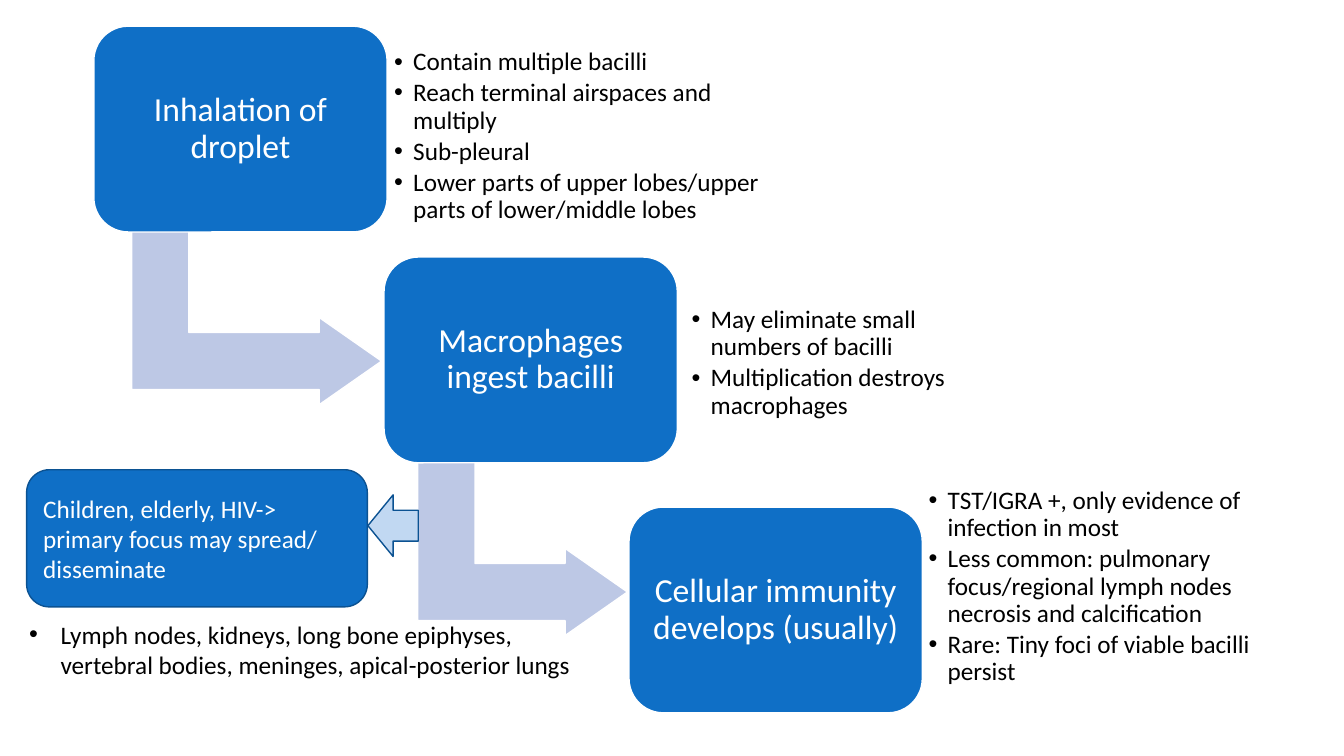
from lxml import etree
from pptx import Presentation
from pptx.dml.color import RGBColor
from pptx.enum.shapes import MSO_SHAPE
from pptx.enum.text import MSO_ANCHOR, PP_ALIGN
from pptx.oxml.ns import qn
from pptx.util import Pt

ROUNDED = MSO_SHAPE.ROUNDED_RECTANGLE
BENT_ARROW = MSO_SHAPE.BENT_UP_ARROW
LEFT_ARROW = MSO_SHAPE.LEFT_ARROW
MIDDLE, TOP = MSO_ANCHOR.MIDDLE, MSO_ANCHOR.TOP
LEFT, CENTER = PP_ALIGN.LEFT, PP_ALIGN.CENTER

BLUE = RGBColor(0x0F, 0x6F, 0xC6)
DARK_BLUE = RGBColor(0x0B, 0x52, 0x92)
PALE_BLUE = RGBColor(0xC1, 0xD8, 0xF2)
LAVENDER = RGBColor(0xBD, 0xC8, 0xE5)
WHITE = RGBColor(0xFF, 0xFF, 0xFF)
BLACK = RGBColor(0, 0, 0)

STEP_SIZE = (209.5, 147)


class FlowSlide:
    """Style and drawing methods for the current slide; lengths in points."""

    font_name = "Calibri"

    def __init__(self, slide):
        self.slide = slide

    def shape(self, kind, box, fill, line, adjustments=(), rotation=0):
        shape = self.slide.shapes.add_shape(kind, *map(Pt, box))
        shape.shadow.inherit = False
        shape.rotation = rotation
        shape.fill.solid()
        shape.fill.fore_color.rgb = fill
        shape.line.color.rgb = line
        shape.line.width = Pt(1)
        for index, value in enumerate(adjustments):
            shape.adjustments[index] = value
        return shape

    def set_text(self, shape, texts, size, color, anchor=MIDDLE, insets=(7.2, 3.6),
                 indent=0, **paragraph_format):
        frame = shape.text_frame
        frame.word_wrap = True
        frame.vertical_anchor = anchor
        frame.margin_left = frame.margin_right = Pt(insets[0])
        frame.margin_top = frame.margin_bottom = Pt(insets[1])
        for index, text in enumerate(texts):
            paragraph = frame.add_paragraph() if index else frame.paragraphs[0]
            for name, value in paragraph_format.items():
                setattr(paragraph, name, value)
            run = paragraph.add_run()
            run.text = text
            for name, value in {"name": self.font_name, "size": Pt(size)}.items():
                setattr(run.font, name, value)
            run.font.color.rgb = color
            if indent:
                self.bullet(paragraph, indent)

    def bullet(self, paragraph, indent):
        properties = paragraph._p.get_or_add_pPr()
        properties.set("marL", str(Pt(indent)))
        properties.set("indent", str(-Pt(indent)))
        etree.SubElement(properties, qn("a:buFont")).set("typeface", "Arial")
        etree.SubElement(properties, qn("a:buChar")).set("char", "•")

    def step(self, left, top, text):
        step = self.shape(ROUNDED, (left, top, *STEP_SIZE), BLUE, WHITE, (0.167,))
        self.set_text(step, [text], 24, WHITE, insets=(7.2, 7.2),
                      alignment=CENTER, line_spacing=0.9)

    def bent_arrow(self, box):
        self.shape(BENT_ARROW, box, LAVENDER, WHITE, (0.328, 0.25, 0.358), 90)

    def bullets(self, box, texts, **text_format):
        points = self.slide.shapes.add_textbox(*map(Pt, box))
        self.set_text(points, texts, 18, BLACK, alignment=LEFT, **text_format)


STEPS = [
    {"at": (67, 18.7), "text": "Inhalation of droplet",
     "arrow": (121, 137.5, 124.6, 178.6),
     "details_box": (276.5, 29.5, 291.6, 136),
     "details": ["Contain multiple bacilli",
                 "Reach terminal airspaces and multiply",
                 "Sub-pleural",
                 "Lower parts of upper lobes/upper parts of lower/middle lobes"]},
    {"at": (274.3, 183.6), "text": "Macrophages ingest bacilli",
     "arrow": (311, 316.8, 124.6, 149.8),
     "details_box": (489, 200, 235.4, 119),
     "details": ["May eliminate small numbers of bacilli",
                 "Multiplication destroys macrophages"]},
    {"at": (449.3, 362.2), "text": "Cellular immunity develops (usually)",
     "arrow": None,
     "details_box": (658.3, 335, 257.8, 168.5),
     "details": ["TST/IGRA +, only evidence of infection in most",
                 "Less common: pulmonary focus/regional lymph nodes "
                 "necrosis and calcification",
                 "Rare: Tiny foci of viable bacilli persist"]},
]


def main():
    deck = Presentation()
    deck.slide_width, deck.slide_height = Pt(960), Pt(540)
    flow = FlowSlide(deck.slides.add_slide(deck.slide_layouts[6]))

    # Staircase of steps with their details
    for step in STEPS:
        if step["arrow"]:
            flow.bent_arrow(step["arrow"])
        flow.step(*step["at"], step["text"])
        flow.bullets(step["details_box"], step["details"], insets=(5, 5),
                     indent=13.7, level=1, line_spacing=0.9, space_after=Pt(2.7))

    # Side branch: spread in vulnerable groups
    spread = flow.shape(ROUNDED, (19, 335.5, 243.4, 98), BLUE, DARK_BLUE)
    flow.set_text(spread,
                  ["Children, elderly, HIV-> primary focus may spread/ disseminate"],
                  18, WHITE, alignment=LEFT)
    flow.shape(LEFT_ARROW, (262.8, 353.5, 36, 44), PALE_BLUE, DARK_BLUE)
    flow.bullets((13.7, 438.5, 416.9, 72.7),
                 ["Lymph nodes, kidneys, long bone epiphyses, vertebral bodies, "
                  "meninges, apical-posterior lungs"],
                 anchor=TOP, indent=22.5)

    deck.save("out.pptx")


if __name__ == "__main__":
    main()
